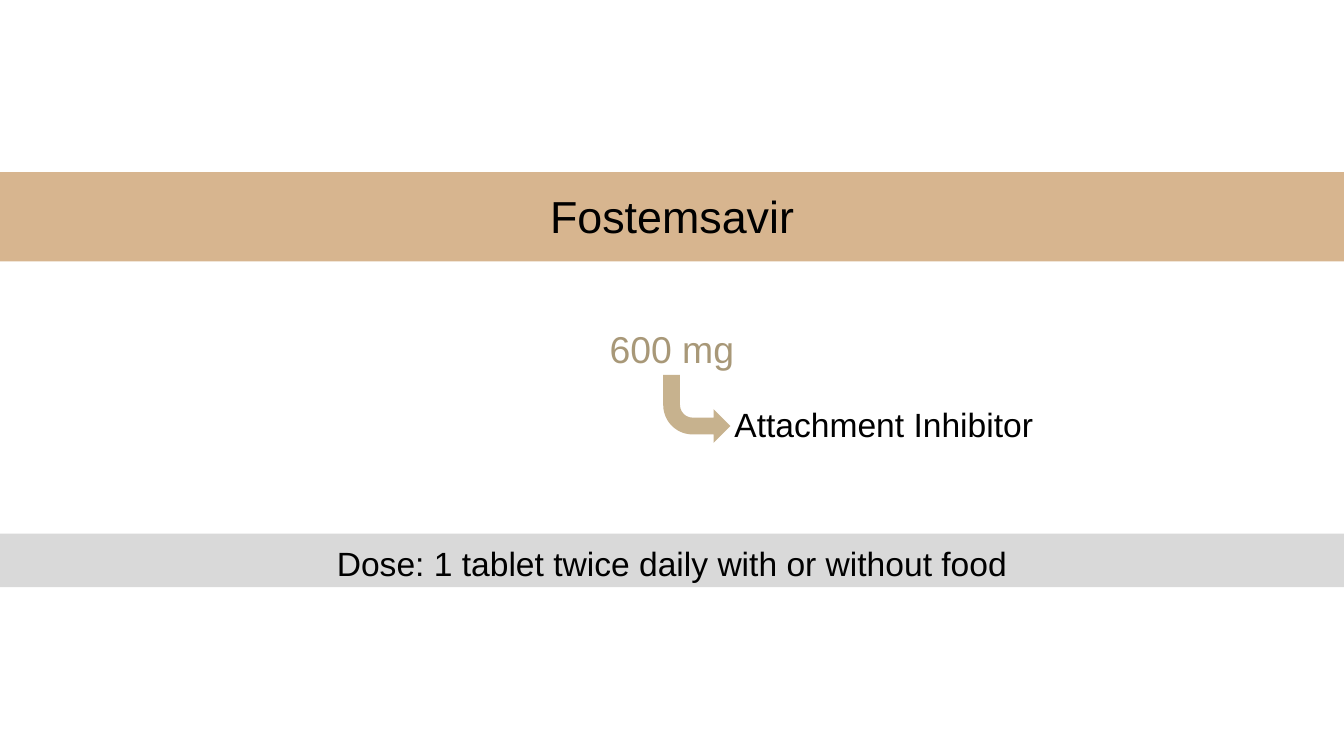
from dataclasses import dataclass
from typing import Optional

from lxml import etree
from pptx import Presentation
from pptx.dml.color import RGBColor
from pptx.enum.shapes import MSO_SHAPE
from pptx.enum.text import MSO_ANCHOR, MSO_AUTO_SIZE, PP_ALIGN
from pptx.oxml.ns import qn
from pptx.util import Emu, Pt

RECTANGLE = MSO_SHAPE.RECTANGLE
ROUNDED = MSO_SHAPE.ROUNDED_RECTANGLE
BENT_ARROW = MSO_SHAPE.BENT_ARROW
LEFT, CENTER = PP_ALIGN.LEFT, PP_ALIGN.CENTER
MIDDLE = MSO_ANCHOR.MIDDLE
NO_AUTOFIT = MSO_AUTO_SIZE.NONE

PX = 4572  # 200 px to the inch
PAGE_WIDTH, PAGE_HEIGHT = 2000, 1125
FONT = "Arial"
COLORS = {
    "text": "000000",
    "strength": "A89878",
    "arrow": "C7B28E",
    "title band": "C79760",
    "dose band": "D9D9D9",
}


@dataclass(frozen=True)
class Frame:
    left: int
    top: int
    width: int
    height: int

    def emu(self) -> list[Emu]:
        return [Emu(n * PX) for n in (self.left, self.top, self.width, self.height)]


@dataclass(frozen=True)
class Label:
    text: str
    frame: Frame
    size: int
    color: str = "text"
    align: PP_ALIGN = CENTER
    line_spacing: Optional[int] = None
    fill: Optional[str] = None


TITLE = Label("Fostemsavir", Frame(-10, 256, 2020, 133), 24,
              line_spacing=28, fill="title band")
LABELS = [
    Label("Dose: 1 tablet twice daily with or without food",
          Frame(-2, 794, 2004, 80), 18, line_spacing=24, fill="dose band"),
    Label("Attachment Inhibitor", Frame(1070, 598, 624, 66), 18, align=LEFT),
    Label("600 mg", Frame(866, 475, 268, 88), 20, color="strength"),
]
ARROW = Frame(987, 558, 100, 101)


def rgb(name: str) -> RGBColor:
    return RGBColor.from_string(COLORS[name])


def paint(shape, fill: Optional[str]) -> None:
    if fill:
        shape.fill.solid()
        shape.fill.fore_color.rgb = rgb(fill)
    else:
        shape.fill.background()
    shape.line.fill.background()


def write_label(shape, label: Label) -> None:
    paint(shape, label.fill)
    frame = shape.text_frame
    frame.text = label.text
    frame.word_wrap = True
    frame.auto_size = NO_AUTOFIT
    frame.vertical_anchor = MIDDLE
    para = frame.paragraphs[0]
    para.alignment = label.align
    if label.line_spacing:
        para.line_spacing = Pt(label.line_spacing)
    font = para.runs[0].font
    font.name, font.size = FONT, Pt(label.size)
    font.color.rgb = rgb(label.color)


def add_title(page, label: Label) -> None:
    title = page.shapes.title
    title.left, title.top, title.width, title.height = label.frame.emu()
    write_label(title, label)
    color = title._element.spPr.find(qn("a:solidFill"))[0]
    etree.SubElement(color, qn("a:alpha"), val="70000")


def add_label(page, label: Label) -> None:
    kind = RECTANGLE if label.fill else ROUNDED
    shape = page.shapes.add_shape(kind, *label.frame.emu())
    shape.shadow.inherit = False
    write_label(shape, label)


def add_arrow(page, frame: Frame) -> None:
    """Draw the arrow that runs down and then right."""
    arrow = page.shapes.add_shape(BENT_ARROW, *frame.emu())
    arrow.shadow.inherit = False
    paint(arrow, "arrow")
    arrow._element.spPr.find(qn("a:xfrm")).set("flipV", "1")


def main() -> None:
    deck = Presentation()
    deck.slide_width, deck.slide_height = Emu(PAGE_WIDTH * PX), Emu(PAGE_HEIGHT * PX)
    page = deck.slides.add_slide(deck.slide_layouts[5])
    add_title(page, TITLE)
    for label in LABELS:
        add_label(page, label)
    add_arrow(page, ARROW)
    deck.save("out.pptx")


if __name__ == "__main__":
    main()
